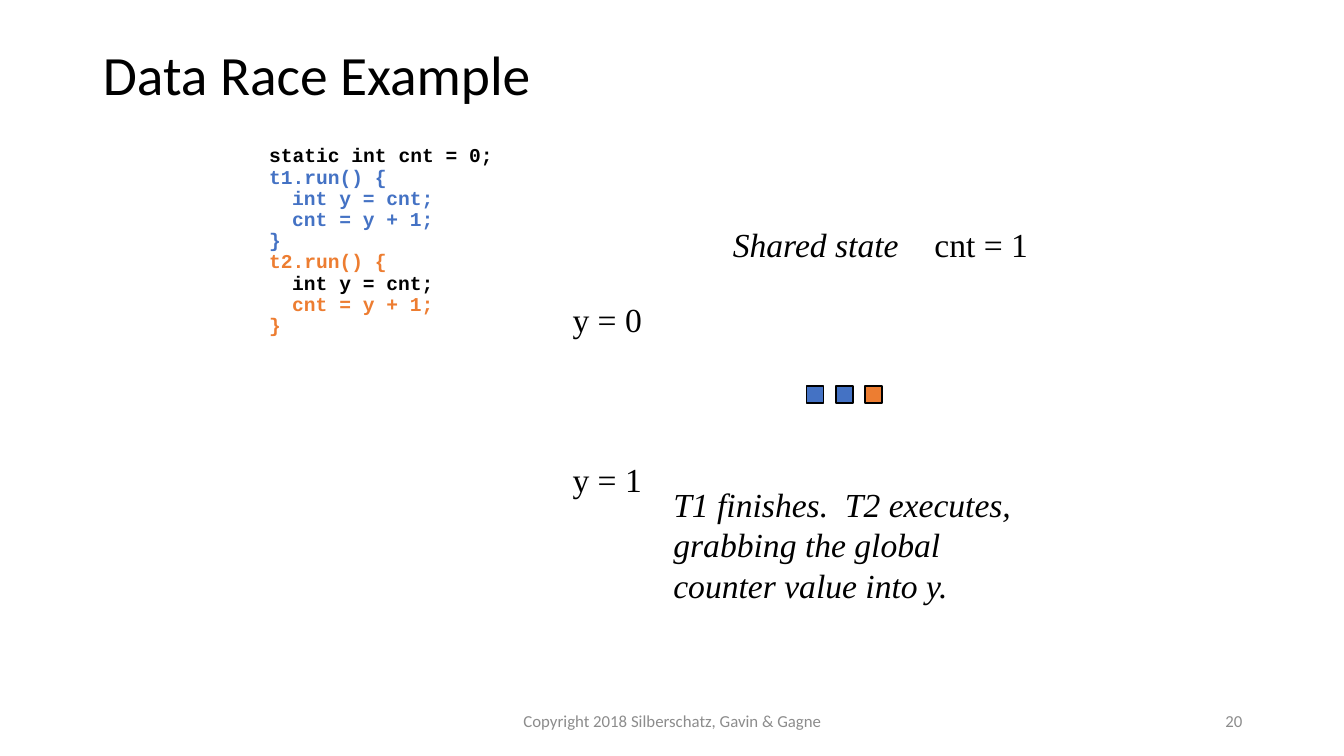
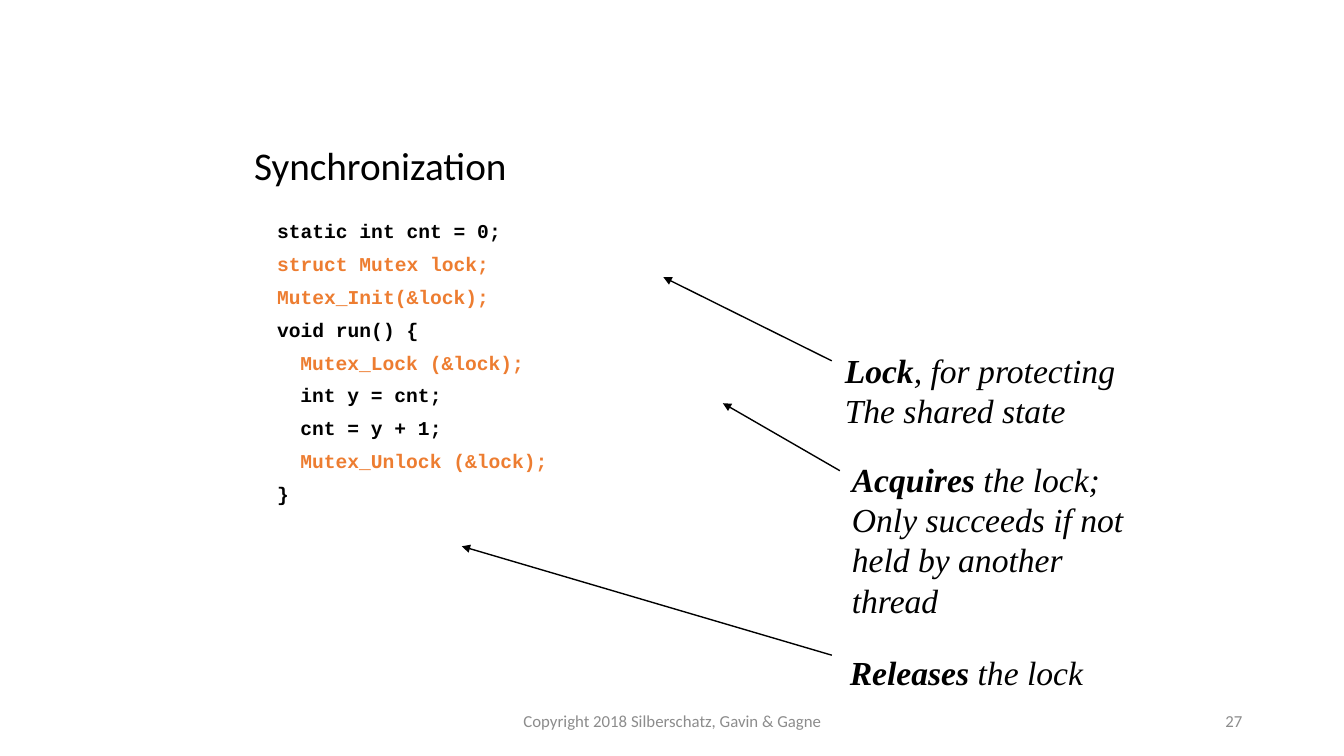
from lxml.etree import SubElement
from pptx import Presentation
from pptx.dml.color import RGBColor
from pptx.enum.shapes import MSO_CONNECTOR, MSO_SHAPE
from pptx.enum.text import MSO_ANCHOR, MSO_AUTO_SIZE, PP_ALIGN
from pptx.oxml.ns import qn
from pptx.util import Inches, Pt

BLACK = RGBColor(0x00, 0x00, 0x00)
BLUE = RGBColor(0x44, 0x72, 0xC4)
ORANGE = RGBColor(0xED, 0x7D, 0x31)
GRAY = RGBColor(0x8C, 0x8C, 0x8C)
TITLE_FONT, CODE_FONT, NOTE_FONT = "Calibri", "Courier New", "Times New Roman"
CODE_INDENT = Inches(0.23)  # two characters of 14 pt code
COPYRIGHT = "Copyright 2018 Silberschatz, Gavin & Gagne"

# Code lines: indent level, text, colour
RACE_CODE = [
    (0, "static int cnt = 0;", BLACK),
    (0, "t1.run() {", BLUE),
    (1, "int y = cnt;", BLUE),
    (1, "cnt = y + 1;", BLUE),
    (0, "}", BLUE),
    (0, "t2.run() {", ORANGE),
    (1, "int y = cnt;", BLACK),
    (1, "cnt = y + 1;", ORANGE),
    (0, "}", ORANGE),
]
MUTEX_CODE = [
    (0, "static int cnt = 0;", BLACK),
    (0, "struct Mutex lock;", ORANGE),
    (0, "Mutex_Init(&lock);", ORANGE),
    (0, "void run() {", BLACK),
    (1, "Mutex_Lock (&lock);", ORANGE),
    (1, "int y = cnt;", BLACK),
    (1, "cnt = y + 1;", BLACK),
    (1, "Mutex_Unlock (&lock);", ORANGE),
    (0, "}", BLACK),
]

# Variable values: box, text
VALUES = [
    ((9.17, 2.17, 1.13, 0.5), "cnt = 1"),
    ((5.58, 2.92, 0.89, 0.5), "y = 0"),
    ((5.58, 4.5, 0.89, 0.5), "y = 1"),
]
STATE_BOX = (7.17, 2.17, 1.86, 0.5)
EXPLANATION_BOX = (6.58, 4.75, 4.67, 1.31)
EXPLANATION = ["T1 finishes.  T2 executes, grabbing the global",
               "counter value into y."]
STEPS = [BLUE, BLUE, ORANGE]  # thread that ran each step so far

# Lock notes: box, bold lead, lines, arrow start, arrow end
LOCK_NOTES = [
    ((8.28, 3.42, 2.99, 0.91), "Lock", [", for protecting", "The shared state"],
     (8.25, 3.58), (6.58, 2.75)),
    ((8.35, 4.5, 2.92, 1.72), "Acquires",
     [" the lock;", "Only succeeds if not", "held by another", "thread"],
     (8.33, 4.67), (7.17, 4)),
    ((8.33, 6.42, 2.52, 0.5), "Releases", [" the lock"], (8.25, 6.5), (4.58, 5.42)),
]


def inches(lengths):
    return [Inches(length) for length in lengths]


def set_font(font, name, size, color, bold=False, italic=False):
    font.name, font.size, font.bold, font.italic = name, Pt(size), bold, italic
    font.color.rgb = color


def add_frame(slide, box, wrap=True):
    frame = slide.shapes.add_textbox(*inches(box)).text_frame
    frame.word_wrap = wrap
    return frame


def add_paragraphs(frame, count):
    return [frame.paragraphs[0]] + [frame.add_paragraph() for _ in range(count - 1)]


def add_titled_slide(deck, title, box, size, number):
    slide = deck.slides.add_slide(deck.slide_layouts[5])
    heading = slide.shapes.title
    heading.left, heading.top, heading.width, heading.height = inches(box)
    frame = heading.text_frame
    frame.text = title
    frame.auto_size = MSO_AUTO_SIZE.NONE
    frame.vertical_anchor = MSO_ANCHOR.BOTTOM
    paragraph = frame.paragraphs[0]
    paragraph.alignment = PP_ALIGN.LEFT
    paragraph.line_spacing = 0.9
    set_font(paragraph.font, TITLE_FONT, size, BLACK)

    # Footer and slide number
    for text, left, width, alignment in [(COPYRIGHT, 4.42, 4.5, PP_ALIGN.CENTER),
                                         (str(number), 9.42, 3, PP_ALIGN.RIGHT)]:
        frame = add_frame(slide, (left, 6.95, width, 0.4))
        frame.vertical_anchor = MSO_ANCHOR.MIDDLE
        frame.text = text
        frame.paragraphs[0].alignment = alignment
        set_font(frame.paragraphs[0].font, TITLE_FONT, 12, GRAY)
    return slide


def add_code(slide, box, code, line_spacing, space_before=0):
    paragraphs = add_paragraphs(add_frame(slide, box), len(code))
    for paragraph, (level, text, color) in zip(paragraphs, code):
        paragraph.text = text
        paragraph.line_spacing = line_spacing
        paragraph.space_before = Pt(space_before)
        set_font(paragraph.font, CODE_FONT, 14, color, bold=True)
        paragraph._p.get_or_add_pPr().set("marL", str(level * CODE_INDENT))


def add_note(slide, box, lines, lead="", italic=True, wrap=False):
    frame = add_frame(slide, box, wrap)
    frame.auto_size = MSO_AUTO_SIZE.SHAPE_TO_FIT_TEXT
    paragraphs = add_paragraphs(frame, len(lines))
    for paragraph, line in zip(paragraphs, lines):
        set_font(paragraph.font, NOTE_FONT, 24, BLACK, italic=italic)
        if lead and paragraph is paragraphs[0]:
            lead_run = paragraph.add_run()
            lead_run.text = lead
            lead_run.font.bold = True
        paragraph.add_run().text = line


def add_step(slide, left, color):
    step = slide.shapes.add_shape(MSO_SHAPE.RECTANGLE, *inches((left, 3.83, 0.17, 0.17)))
    step.shadow.inherit = False
    step.fill.solid()
    step.fill.fore_color.rgb = color
    step.line.color.rgb = BLACK
    step.line.width = Pt(1)


def add_arrow(slide, start, end):
    arrow = slide.shapes.add_connector(MSO_CONNECTOR.STRAIGHT, *inches(start + end))
    arrow.line.color.rgb = BLACK
    arrow.line.width = Pt(1)
    SubElement(arrow.line._get_or_add_ln(), qn("a:tailEnd"), type="triangle")
    SubElement(arrow._element.spPr, qn("a:effectLst"))


def build_race_slide(deck):
    slide = add_titled_slide(deck, "Data Race Example", (0.92, 0.4, 11.5, 0.72), 39.6, 20)
    add_code(slide, (2.57, 1.4, 4.57, 4.9), RACE_CODE, 0.9)
    for box, value in VALUES:
        add_note(slide, box, [value], italic=False)
    add_note(slide, STATE_BOX, ["Shared state"])
    add_note(slide, EXPLANATION_BOX, EXPLANATION, wrap=True)
    for index, color in enumerate(STEPS):
        add_step(slide, 8 + 0.29 * index, color)


def build_mutex_slide(deck):
    slide = add_titled_slide(deck, "Synchronization", (2.42, 0.67, 8.5, 1.25), 28, 27)
    add_code(slide, (2.65, 2.17, 8.27, 5), MUTEX_CODE, 0.8, space_before=10)
    for box, lead, lines, start, end in LOCK_NOTES:
        add_note(slide, box, lines, lead)
        add_arrow(slide, start, end)


def main():
    deck = Presentation()
    deck.slide_width, deck.slide_height = Inches(13.33), Inches(7.5)
    build_race_slide(deck)
    build_mutex_slide(deck)
    deck.save("out.pptx")


if __name__ == "__main__":
    main()
